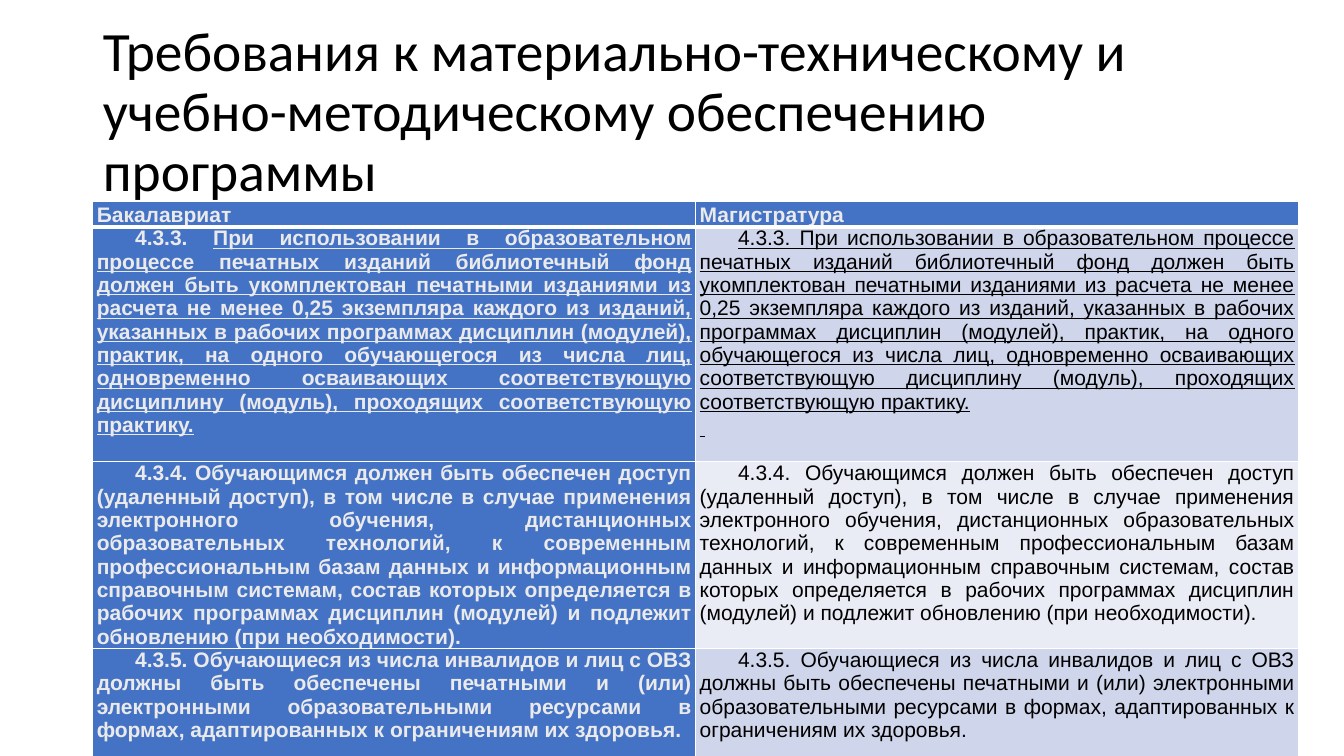
from lxml import etree
from pptx import Presentation
from pptx.dml.color import RGBColor
from pptx.enum.text import MSO_ANCHOR, MSO_AUTO_SIZE, PP_ALIGN
from pptx.oxml.ns import qn
from pptx.util import Inches, Pt

COLORS = {
    "background": "FFFFFF",
    "light": "EAEAEA",
    "dark": "000000",
    "accent": "4472C4",
    "band_odd": "CFD5EA",
    "band_even": "E9EBF5",
}
TITLE = "Требования к материально-техническому и учебно-методическому обеспечению программы"
HEADERS = ("Бакалавриат", "Магистратура")
COLUMN_WIDTH = 5.98
ROW_HEIGHTS = (0.25, 2.19, 1.7, 1.22)
BLANK = " "

LIBRARY = (
    "При использовании в образовательном процессе печатных изданий библиотечный фонд "
    "должен быть укомплектован печатными изданиями из расчета не менее 0,25 экземпляра "
    "каждого из изданий, указанных в рабочих программах дисциплин (модулей), практик, "
    "на одного обучающегося из числа лиц, одновременно осваивающих соответствующую "
    "дисциплину (модуль), проходящих соответствующую практику."
)
ACCESS = (
    "Обучающимся должен быть обеспечен доступ (удаленный доступ), в том числе в случае "
    "применения электронного обучения, дистанционных образовательных технологий, "
    "к современным профессиональным базам данных и информационным справочным системам, "
    "состав которых определяется в рабочих программах дисциплин (модулей) и подлежит "
    "обновлению (при необходимости)."
)
DISABILITY = (
    "Обучающиеся из числа инвалидов и лиц с ОВЗ должны быть обеспечены печатными и (или) "
    "электронными образовательными ресурсами в формах, адаптированных к ограничениям "
    "их здоровья."
)
# Number, wording, underlined, closing blank line
REQUIREMENTS = (
    ("4.3.3. ", LIBRARY, True, True),
    ("4.3.4. ", ACCESS, False, False),
    ("4.3.5. ", DISABILITY, False, True),
)


def set_attributes(target, values):
    for name, value in values.items():
        setattr(target, name, value)


def rgb(name):
    return RGBColor.from_string(COLORS[name])


def add_run(paragraph, text, color, **font_values):
    run = paragraph.add_run()
    run.text = text
    set_attributes(run.font, {"name": "Arial", "size": Pt(15), **font_values})
    run.font.color.rgb = rgb(color)


def add_title(slide):
    title = slide.shapes.title
    set_attributes(title, {
        "left": Inches(0.92), "top": Inches(0.4),
        "width": Inches(11.5), "height": Inches(1.45),
    })
    frame = title.text_frame
    set_attributes(frame, {
        "word_wrap": True, "auto_size": MSO_AUTO_SIZE.NONE,
        "vertical_anchor": MSO_ANCHOR.MIDDLE,
    })
    paragraph = frame.paragraphs[0]
    set_attributes(paragraph, {"alignment": PP_ALIGN.LEFT, "line_spacing": 0.9})
    add_run(paragraph, TITLE, "dark", name="Calibri", size=Pt(39.6))


def set_borders(cell, bottom_width, top_width):
    properties = cell._tc.get_or_add_tcPr()
    widths = {"a:lnL": 1, "a:lnR": 1, "a:lnT": top_width, "a:lnB": bottom_width}
    for index, (tag, width) in enumerate(widths.items()):
        line = etree.Element(qn(tag), w=str(Pt(width)))
        fill = etree.SubElement(line, qn("a:solidFill"))
        etree.SubElement(fill, qn("a:srgbClr"), val=COLORS["background"])
        properties.insert(index, line)


def format_cell(cell, row, color):
    set_attributes(cell, {
        "margin_left": Inches(0.04), "margin_right": Inches(0.04),
        "margin_top": 0, "margin_bottom": 0, "vertical_anchor": MSO_ANCHOR.TOP,
    })
    cell.fill.solid()
    cell.fill.fore_color.rgb = rgb(color)
    set_borders(cell, bottom_width=3 if row == 0 else 1, top_width=3 if row == 1 else 1)


def fill_header(cell, text):
    paragraph = cell.text_frame.paragraphs[0]
    paragraph.line_spacing = 1.07
    add_run(paragraph, text, "light", bold=True)


def fill_requirement(cell, requirement, is_bachelor):
    number, wording, underlined, has_blank = requirement
    color = "light" if is_bachelor else "dark"
    number_underlined = underlined and not is_bachelor
    frame = cell.text_frame
    paragraph = frame.paragraphs[0]
    paragraph.alignment = PP_ALIGN.JUSTIFY
    paragraph._p.get_or_add_pPr().set("indent", str(Inches(0.38)))
    add_run(paragraph, number, color, bold=is_bachelor, underline=number_underlined)
    add_run(paragraph, wording, color, bold=is_bachelor, underline=underlined)
    if has_blank:
        closing = frame.add_paragraph()
        closing.line_spacing = 1.07
        add_run(closing, BLANK, color, bold=is_bachelor, underline=number_underlined)


def add_requirements_table(slide):
    table = slide.shapes.add_table(
        len(ROW_HEIGHTS), len(HEADERS), Inches(0.92), Inches(2),
        Inches(COLUMN_WIDTH * len(HEADERS)), Inches(sum(ROW_HEIGHTS)),
    ).table
    for column in table.columns:
        column.width = Inches(COLUMN_WIDTH)
    for row, height in zip(table.rows, ROW_HEIGHTS):
        row.height = Inches(height)

    # Header row
    for column, header in enumerate(HEADERS):
        cell = table.cell(0, column)
        format_cell(cell, 0, "accent")
        fill_header(cell, header)

    # Requirement rows: accent first column, banded second column
    for row, requirement in enumerate(REQUIREMENTS, start=1):
        band = "band_odd" if row % 2 else "band_even"
        for column, color in enumerate(("accent", band)):
            cell = table.cell(row, column)
            format_cell(cell, row, color)
            fill_requirement(cell, requirement, is_bachelor=column == 0)


def main():
    presentation = Presentation()
    set_attributes(presentation, {"slide_width": Inches(13.33), "slide_height": Inches(7.5)})
    slide = presentation.slides.add_slide(presentation.slide_layouts[5])
    slide.background.fill.solid()
    slide.background.fill.fore_color.rgb = rgb("background")
    add_title(slide)
    add_requirements_table(slide)
    presentation.save("out.pptx")


if __name__ == "__main__":
    main()
